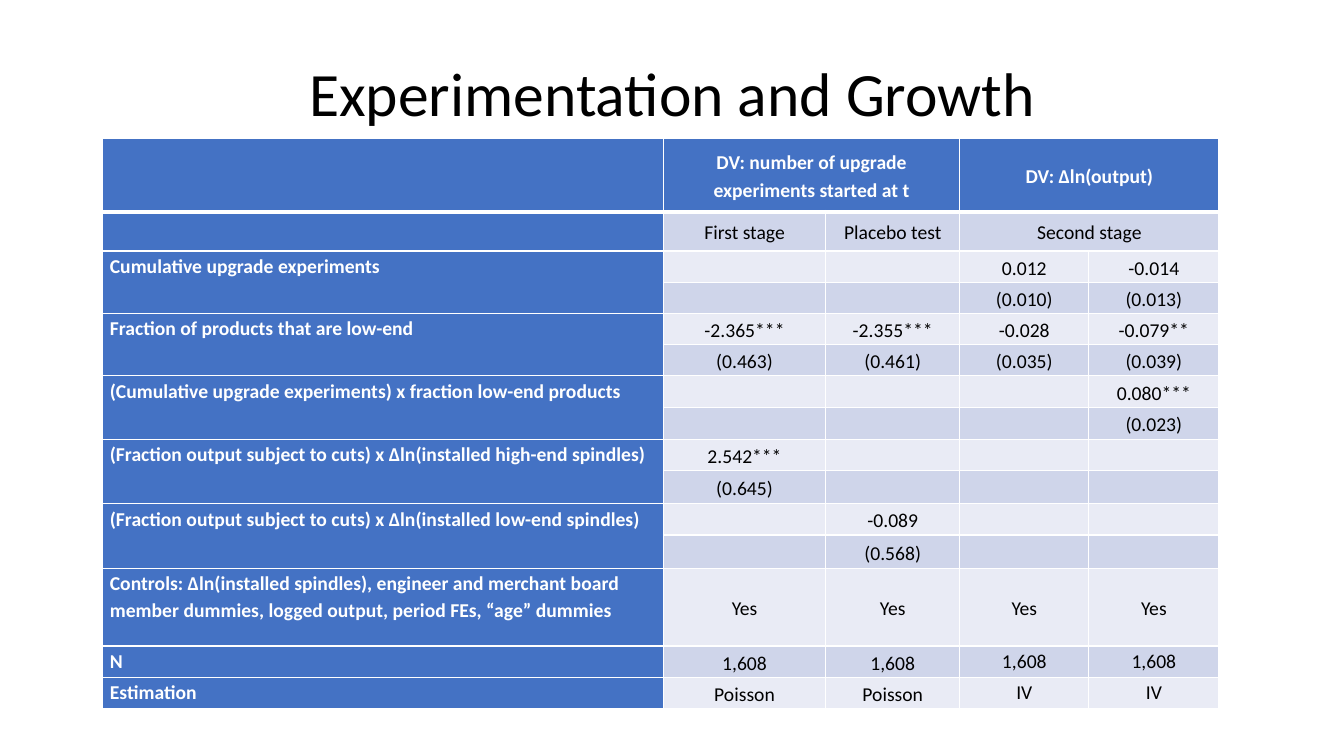
from lxml import etree
from pptx import Presentation
from pptx.dml.color import RGBColor
from pptx.enum.text import MSO_ANCHOR as Anchor, PP_ALIGN as Align
from pptx.oxml import parse_xml
from pptx.oxml.ns import nsdecls
from pptx.util import Pt

PX = 9144  # EMU per px, 100 px to the inch
FONT = "Calibri"
BLACK = RGBColor(0x00, 0x00, 0x00)
WHITE = RGBColor(0xFF, 0xFF, 0xFF)
BLUE = RGBColor(0x44, 0x72, 0xC4)
BAND_DARK = RGBColor(0xCF, 0xD5, 0xEA)
BAND_LIGHT = RGBColor(0xE9, 0xEB, 0xF5)

COLUMN_WIDTHS = [556, 161, 133, 128, 129]
ROW_HEIGHTS = [73, 39, 31, 31, 31, 31, 31, 32, 31, 33, 31, 33, 77, 31, 31]
ROWS = [
    ["", "DV: number of upgrade experiments started at t", "", "DV: Δln(output)", ""],
    ["", "First stage", "Placebo test", "Second stage", ""],
    ["Cumulative upgrade experiments", "", "", "0.012", "-0.014"],
    ["", "", "", "(0.010)", "(0.013)"],
    ["Fraction of products that are low-end", "-2.365***", "-2.355***", "-0.028", "-0.079**"],
    ["", "(0.463)", "(0.461)", "(0.035)", "(0.039)"],
    ["(Cumulative upgrade experiments) x fraction low-end products", "", "", "", "0.080***"],
    ["", "", "", "", "(0.023)"],
    ["(Fraction output subject to cuts) x Δln(installed high-end spindles)", "2.542***", "", "", ""],
    ["", "(0.645)", "", "", ""],
    ["(Fraction output subject to cuts) x Δln(installed low-end spindles)", "", "-0.089", "", ""],
    ["", "", "(0.568)", "", ""],
    ["Controls: Δln(installed spindles), engineer and merchant board member dummies, "
     "logged output, period FEs, “age” dummies", "Yes", "Yes", "Yes", "Yes"],
    ["N", "1,608", "1,608", "1,608", "1,608"],
    ["Estimation", "Poisson", "Poisson", "IV", "IV"],
]


def set_format(target, values):
    for name, value in values.items():
        setattr(target, name, value)


def add_border(cell, position, side, points):
    line = parse_xml(
        f'<a:{side} {nsdecls("a")} w="{Pt(points)}"><a:solidFill>'
        f'<a:srgbClr val="{WHITE}"/></a:solidFill></a:{side}>')
    cell._tc.get_or_add_tcPr().insert(position, line)


presentation = Presentation()
set_format(presentation, {"slide_width": 1333 * PX, "slide_height": 750 * PX})
slide = presentation.slides.add_slide(presentation.slide_layouts[5])

# Title
title = slide.shapes.title
set_format(title, {"left": 92 * PX, "top": 40 * PX, "width": 1150 * PX, "height": 111 * PX})
title.text_frame.text = "Experimentation and Growth"
title.text_frame.vertical_anchor = Anchor.MIDDLE
paragraph = title.text_frame.paragraphs[0]
set_format(paragraph, {"alignment": Align.CENTER, "line_spacing": 0.9})
set_format(paragraph.runs[0].font, {"name": FONT, "size": Pt(44)})
paragraph.runs[0].font.color.rgb = BLACK

# Regression table
table = slide.shapes.add_table(
    len(ROWS), len(COLUMN_WIDTHS), 102 * PX, 137 * PX,
    sum(COLUMN_WIDTHS) * PX, sum(ROW_HEIGHTS) * PX).table
for column, width in zip(table.columns, COLUMN_WIDTHS):
    column.width = width * PX
for row, height in zip(table.rows, ROW_HEIGHTS):
    row.height = height * PX

# Cells: blue header row and label column, banded values
for r, texts in enumerate(ROWS):
    for c, text in enumerate(texts):
        cell = table.cell(r, c)
        is_heading = r == 0 or c == 0
        is_top = (c == 0 and r > 0) or (c > 2 and r > 12)
        set_format(cell, {
            "margin_left": 7 * PX, "margin_right": 7 * PX,
            "margin_top": 0, "margin_bottom": 0,
            "vertical_anchor": Anchor.TOP if is_top else Anchor.MIDDLE})
        cell.fill.solid()
        cell.fill.fore_color.rgb = BLUE if is_heading else BAND_DARK if r % 2 else BAND_LIGHT

        borders = {"lnL": 1, "lnR": 1, "lnT": 3 if r == 1 else 1, "lnB": 3 if r == 0 else 1}
        for position, (side, points) in enumerate(borders.items()):
            add_border(cell, position, side, points)

        paragraph = cell.text_frame.paragraphs[0]
        set_format(paragraph, {
            "alignment": Align.LEFT if c == 0 else Align.CENTER, "line_spacing": 1.15})
        if text:
            run = paragraph.add_run()
            run.text = text
            set_format(run.font, {"name": FONT, "size": Pt(14), "bold": is_heading})
            run.font.color.rgb = WHITE if is_heading else BLACK
        else:
            # Keeps empty cells from stretching their row
            paragraph._p.get_or_add_endParaRPr().set("sz", "1400")

# Merged headings and two-row labels
for r, c in [(0, 1), (0, 3), (1, 3)]:
    table.cell(r, c).merge(table.cell(r, c + 1))
for r in range(2, 12, 2):
    table.cell(r, 0).merge(table.cell(r + 1, 0))

presentation.save("out.pptx")
